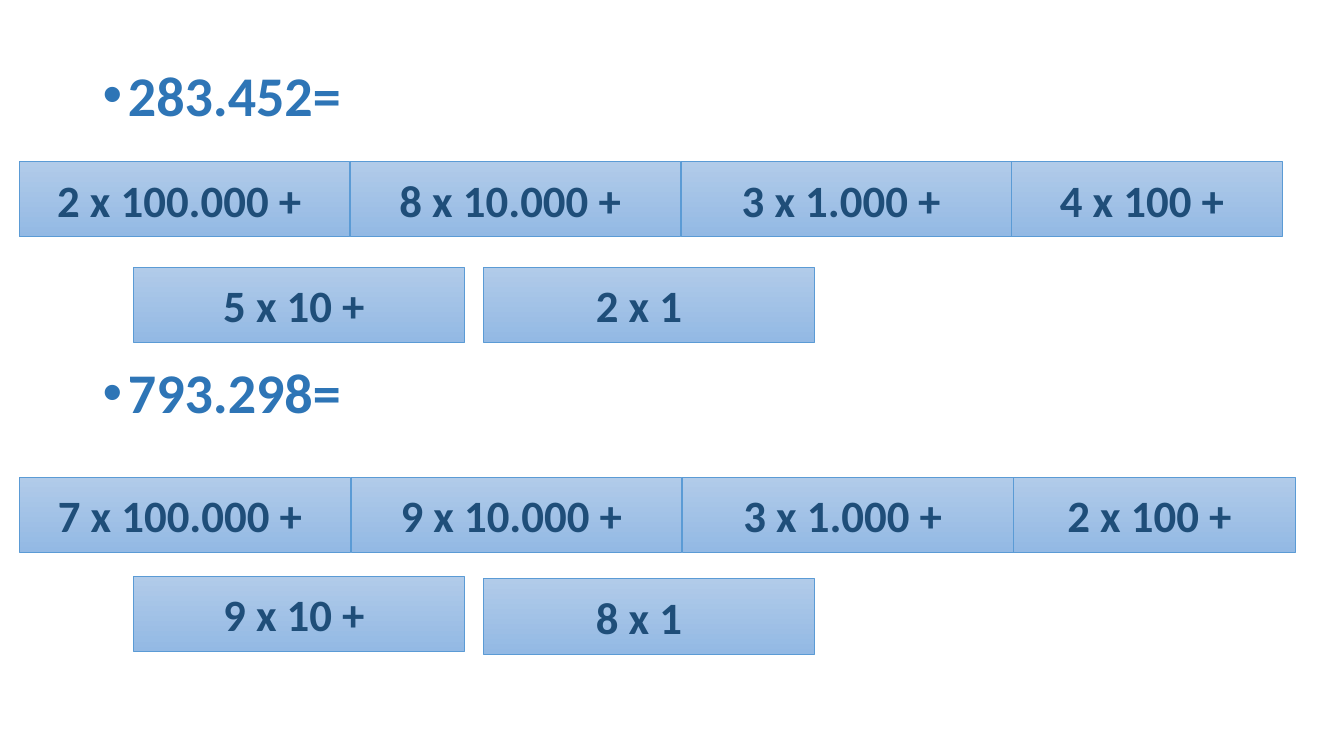
from dataclasses import dataclass

from lxml.etree import SubElement
from pptx import Presentation
from pptx.dml.color import RGBColor
from pptx.enum.shapes import MSO_SHAPE
from pptx.enum.text import MSO_ANCHOR, MSO_AUTO_SIZE, PP_ALIGN
from pptx.oxml.ns import qn
from pptx.util import Cm, Pt


@dataclass(frozen=True)
class Theme:
    font: str = "Calibri"
    number_color: str = "2E75B6"
    term_color: str = "1F4E79"
    line_color: str = "5B9BD5"
    gradient: tuple = ("B1CBE9", "93B9E4")
    number_size: int = 40
    term_size: int = 32


THEME = Theme()
TERM_WIDTH, TERM_HEIGHT = 8.33, 1.9


def write(para, text, *, size, color, align=PP_ALIGN.LEFT, bold=True):
    para.alignment = align
    span = para.add_run()
    span.text = text
    span.font.name = THEME.font
    span.font.size = Pt(size)
    span.font.bold = bold
    span.font.color.rgb = RGBColor.from_string(color)


def add_bullet(para, indent):
    properties = para._p.get_or_add_pPr()
    properties.set("marL", str(indent))
    properties.set("indent", str(-indent))
    SubElement(properties, qn("a:buFont")).set("typeface", "Arial")
    SubElement(properties, qn("a:buChar")).set("char", "•")


def fill_numbers(body, numbers, gap):
    """Bulleted numbers, with room between them for their terms."""
    body.left, body.top = Cm(2.33), Cm(1.58)
    body.width, body.height = Cm(29.21), Cm(15.6)
    frame = body.text_frame
    frame.auto_size = MSO_AUTO_SIZE.NONE
    frame.vertical_anchor = MSO_ANCHOR.TOP
    for index, number in enumerate(numbers):
        para = frame.add_paragraph() if index else frame.paragraphs[0]
        add_bullet(para, Cm(0.64))
        para.line_spacing = 0.9
        para.space_before = Pt(gap if index else 0)
        write(para, number, size=THEME.number_size, color=THEME.number_color)


def add_term(page, text, left, top, width):
    box = page.shapes.add_shape(
        MSO_SHAPE.RECTANGLE, Cm(left), Cm(top), Cm(width), Cm(TERM_HEIGHT))
    box.shadow.inherit = False
    box.fill.gradient()
    box.fill.gradient_angle = 270
    for stop, color, position in zip(box.fill.gradient_stops, THEME.gradient, (0, 1)):
        stop.color.rgb = RGBColor.from_string(color)
        stop.position = position
    box.line.color.rgb = RGBColor.from_string(THEME.line_color)
    box.line.width = Pt(0.5)
    frame = box.text_frame
    frame.word_wrap = True
    frame.vertical_anchor = MSO_ANCHOR.MIDDLE
    # The terms sit slightly left of centre, the last one a little more
    frame.margin_right = Cm(0.5 if text.endswith("+") else 0.75)
    write(frame.paragraphs[0], text, size=THEME.term_size,
          color=THEME.term_color, align=PP_ALIGN.CENTER)


def add_term_row(page, terms, left, top, step, last_width=TERM_WIDTH, drop=0):
    """Terms side by side; each starts one step right and one drop lower."""
    for index, term in enumerate(terms):
        width = last_width if index == len(terms) - 1 else TERM_WIDTH
        add_term(page, term, left + index * step, top + index * drop, width)


def main():
    deck = Presentation()
    deck.slide_width, deck.slide_height = Cm(33.87), Cm(19.05)
    page = deck.slides.add_slide(deck.slide_layouts[1])
    title = page.shapes.title
    title.element.getparent().remove(title.element)

    # Numbers to decompose
    fill_numbers(page.placeholders[1], ["283.452=", "793.298="], gap=169)

    # Terms of the first number
    add_term_row(page, ["2 x 100.000 +", "8 x 10.000 +", "3 x 1.000 +", "4 x 100 +"],
                 left=0.48, top=4.07, step=8.34, last_width=6.81)
    add_term_row(page, ["5 x 10 +", "2 x 1"], left=3.37, top=6.73, step=8.82)

    # Terms of the second number
    add_term_row(page, ["7 x 100.000 +", "9 x 10.000 +", "3 x 1.000 +", "2 x 100 +"],
                 left=0.5, top=12.02, step=8.35, last_width=7.09)
    add_term_row(page, ["9 x 10 +", "8 x 1"], left=3.37, top=14.52, step=8.82, drop=0.06)

    deck.save("out.pptx")


if __name__ == "__main__":
    main()
